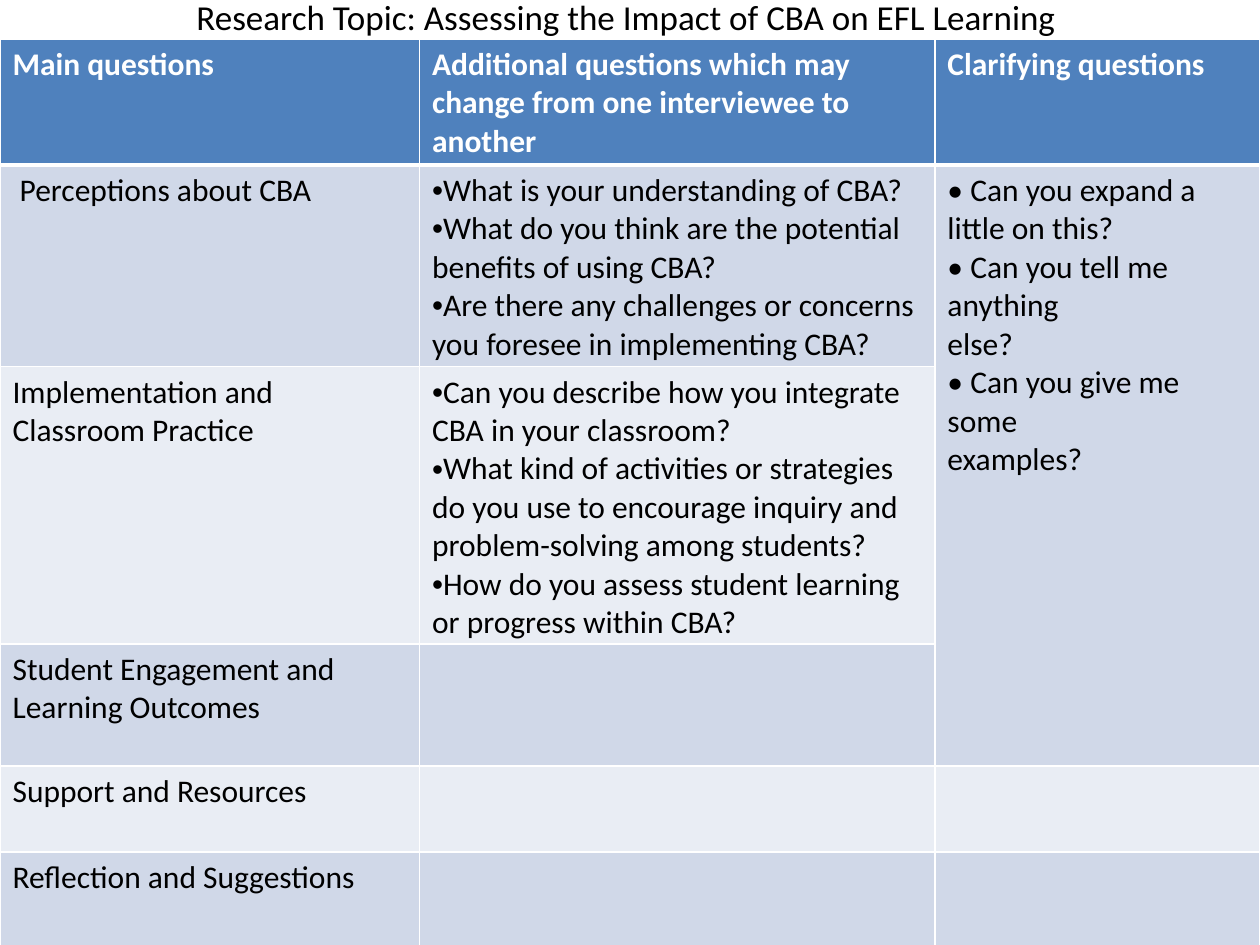
from lxml.etree import SubElement
from pptx import Presentation
from pptx.dml.color import RGBColor
from pptx.enum.text import MSO_ANCHOR, PP_ALIGN
from pptx.oxml.ns import qn
from pptx.util import Inches, Pt

WHITE = RGBColor(0xFF, 0xFF, 0xFF)
BLACK = RGBColor(0, 0, 0)
BLUE = RGBColor(0x4F, 0x81, 0xBD)
BANDS = [RGBColor(0xE9, 0xED, 0xF4), RGBColor(0xD0, 0xD8, 0xE8)]

TITLE = "Research Topic: Assessing the Impact of CBA on EFL Learning"
WIDTHS = [3.33, 4.09, 2.58]
HEIGHTS = [0.6, 1.27, 1.17, 0.97, 0.68, 1.12]
ROWS = [
    ["Main questions",
     "Additional questions which may change from one interviewee to another",
     "Clarifying questions"],
    [" Perceptions about CBA",
     "What is your understanding of CBA?\n"
     "What do you think are the potential benefits of using CBA?\n"
     "Are there any challenges or concerns you foresee in implementing CBA?",
     "• Can you expand a little on this?\n"
     "• Can you tell me anything\n"
     "else?\n"
     "• Can you give me some\n"
     "examples?"],
    ["Implementation and Classroom Practice",
     "Can you describe how you integrate CBA in your classroom?\n"
     "What kind of activities or strategies do you use to encourage inquiry "
     "and problem-solving among students?\n"
     "How do you assess student learning or progress within CBA?",
     ""],
    ["Student Engagement and Learning Outcomes", "", ""],
    ["Support and Resources", "", ""],
    ["Reflection and Suggestions", "", ""],
]


def style(par, size, color, bold=False):
    font = par.font
    font.name, font.size, font.bold = "Calibri", Pt(size), bold
    font.color.rgb = color


def add_bullet(par):
    props = par._p.get_or_add_pPr()
    props.set("marL", "0")
    props.set("indent", "0")
    SubElement(props, qn("a:buFont"), typeface="Arial")
    SubElement(props, qn("a:buChar"), char="•")


def add_edges(cell, head):
    props = cell._tc.get_or_add_tcPr()
    for side in "LRTB":
        width = 3 if head and side == "B" or not head and side == "H" else 1
        line = SubElement(props, qn(f"a:ln{side}"), w=str(Pt(width)))
        fill = SubElement(line, qn("a:solidFill"))
        SubElement(fill, qn("a:srgbClr"), val=str(WHITE))


def add_title(slide):
    box = slide.shapes.add_textbox(Inches(0.47), 0, Inches(9), Inches(0.56))
    frame = box.text_frame
    frame.word_wrap = True
    frame.vertical_anchor = MSO_ANCHOR.MIDDLE
    # The line sits in the strip above the table
    frame.margin_top, frame.margin_bottom = 0, Inches(0.29)
    frame.text = TITLE
    par = frame.paragraphs[0]
    par.alignment = PP_ALIGN.CENTER
    style(par, 20, BLACK)


def fill_cell(cell, text, row, col):
    head = row == 0
    add_edges(cell, head)
    cell.fill.solid()
    cell.fill.fore_color.rgb = BLUE if head else BANDS[row % 2]
    cell.text_frame.text = text
    for par in cell.text_frame.paragraphs:
        if text and col == 1 and not head:
            add_bullet(par)
        style(par, 18, WHITE if head else BLACK, head)


def add_grid(slide):
    frame = slide.shapes.add_table(len(HEIGHTS), len(WIDTHS), 0, Inches(0.31),
                                   Inches(10), Inches(7.57))
    table = frame.table
    for col, width in zip(table.columns, WIDTHS):
        col.width = Inches(width)
    for row, height in zip(table.rows, HEIGHTS):
        row.height = Inches(height)
    frame.height = Inches(7.57)
    for row, texts in enumerate(ROWS):
        for col, text in enumerate(texts):
            fill_cell(table.cell(row, col), text, row, col)
    # The clarifying questions serve the first three topics
    table.cell(1, 2).merge(table.cell(3, 2))


def main():
    deck = Presentation()
    deck.slide_width, deck.slide_height = Inches(10), Inches(7.5)
    slide = deck.slides.add_slide(deck.slide_layouts[6])
    add_title(slide)
    add_grid(slide)
    deck.save("out.pptx")


if __name__ == "__main__":
    main()
